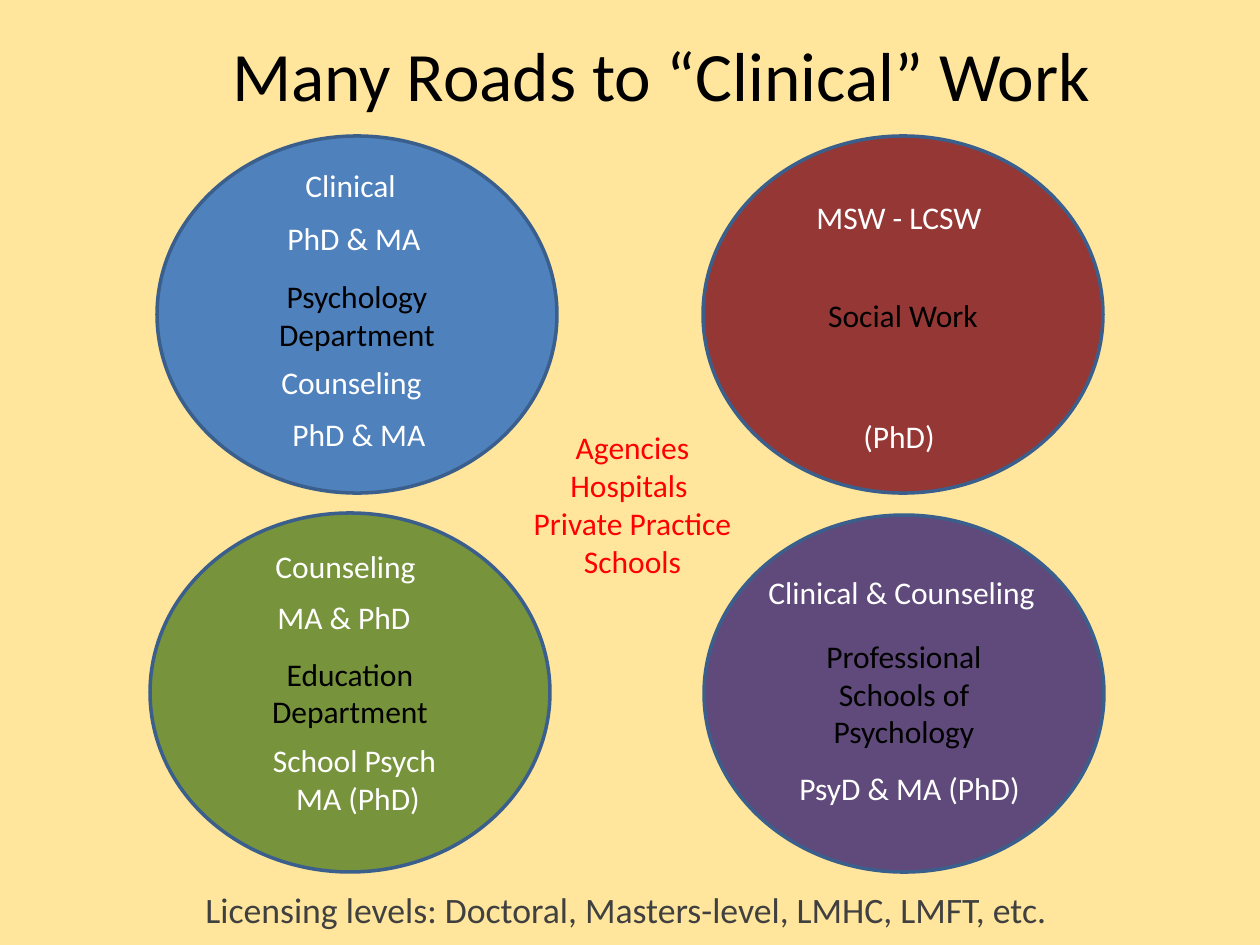
"""Build the slide on the academic roads to clinical work."""
from dataclasses import dataclass

from pptx import Presentation
from pptx.dml.color import RGBColor
from pptx.enum.shapes import MSO_SHAPE
from pptx.enum.text import MSO_ANCHOR, PP_ALIGN
from pptx.util import Emu, Pt


@dataclass(frozen=True)
class Theme:
    font: str = "Calibri"
    background: str = "FFE69C"
    outline: str = "3A5F8C"
    dark: str = "000000"
    light: str = "FFFFFF"
    muted: str = "404040"
    accent: str = "FF0000"
    title: float = 39.6
    footer: float = 20.4
    body: float = 18


THEME = Theme()
CIRCLE_W = 400
LABEL_H = 50

TITLE = ("Many Roads to “Clinical” Work", (126, 32, 1071, 84))
FOOTER = ("Licensing levels: Doctoral, Masters-level, LMHC, LMFT, etc.",
          (185, 882, 882, 63))
SETTINGS = (["Agencies Hospitals ", "Private Practice Schools"],
            (514, 422, 237, 165))
SCHOOL = (["School Psych ", "MA (PhD)"], (237, 735, 242, 89))

DEPARTMENTS = [
    (["Education", "Department"], "77933C", (150, 513, CIRCLE_W, 359)),
    (["Social Work"], "953735", (703, 136, CIRCLE_W, 357)),
    (["Professional Schools of Psychology"], "604A7B", (704, 515, CIRCLE_W, 357)),
    (["Psychology Department"], "4F81BD", (157, 136, CIRCLE_W, 357)),
]

DEGREES = [
    ("Clinical", 293, 160, 137),
    ("PhD & MA", 275, 213, 164),
    ("Counseling", 269, 357, 191),
    ("PhD & MA", 280, 409, 190),
    ("Counseling", 263, 541, 183),
    ("MA & PhD", 265, 592, 171),
    ("MSW - LCSW", 804, 192, 231),
    ("(PhD)", 851, 411, 105),
    ("Clinical & Counseling", 756, 567, 294),
    ("PsyD & MA (PhD)", 787, 763, 305),
]


def px(n):
    return Emu(round(n * 914400 / 126))


def rgb(color):
    return RGBColor.from_string(color)


def write(s, lines, color, size, align=PP_ALIGN.CENTER, anchor=MSO_ANCHOR.TOP):
    tf = s.text_frame
    tf.word_wrap = True
    tf.vertical_anchor = anchor
    for i, line in enumerate(lines):
        p = tf.add_paragraph() if i else tf.paragraphs[0]
        p.text = line
        p.alignment = align
        p.font.name = THEME.font
        p.font.size = Pt(size)
        p.font.color.rgb = rgb(color)


def add_text(slide, lines, box, color, size, **layout):
    s = slide.shapes.add_textbox(*map(px, box))
    write(s, lines, color, size, **layout)


def add_department(slide, lines, color, box):
    s = slide.shapes.add_shape(MSO_SHAPE.OVAL, *map(px, box))
    s.shadow.inherit = False
    s.fill.solid()
    s.fill.fore_color.rgb = rgb(color)
    s.line.color.rgb = rgb(THEME.outline)
    s.line.width = Pt(2)
    write(s, lines, THEME.dark, THEME.body, anchor=MSO_ANCHOR.MIDDLE)


def main():
    prs = Presentation()
    prs.slide_width, prs.slide_height = px(1260), px(945)
    slide = prs.slides.add_slide(prs.slide_layouts[6])
    fill = slide.background.fill
    fill.solid()
    fill.fore_color.rgb = rgb(THEME.background)

    text, box = TITLE
    add_text(slide, [text], box, THEME.dark, THEME.title, anchor=MSO_ANCHOR.MIDDLE)
    text, box = FOOTER
    add_text(slide, [text], box, THEME.muted, THEME.footer)
    for department in DEPARTMENTS:
        add_department(slide, *department)
    for text, x, y, w in DEGREES:
        add_text(slide, [text], (x, y, w, LABEL_H), THEME.light, THEME.body,
                 align=PP_ALIGN.LEFT)
    add_text(slide, *SCHOOL, THEME.light, THEME.body)
    add_text(slide, *SETTINGS, THEME.accent, THEME.body)
    prs.save("out.pptx")


if __name__ == "__main__":
    main()
